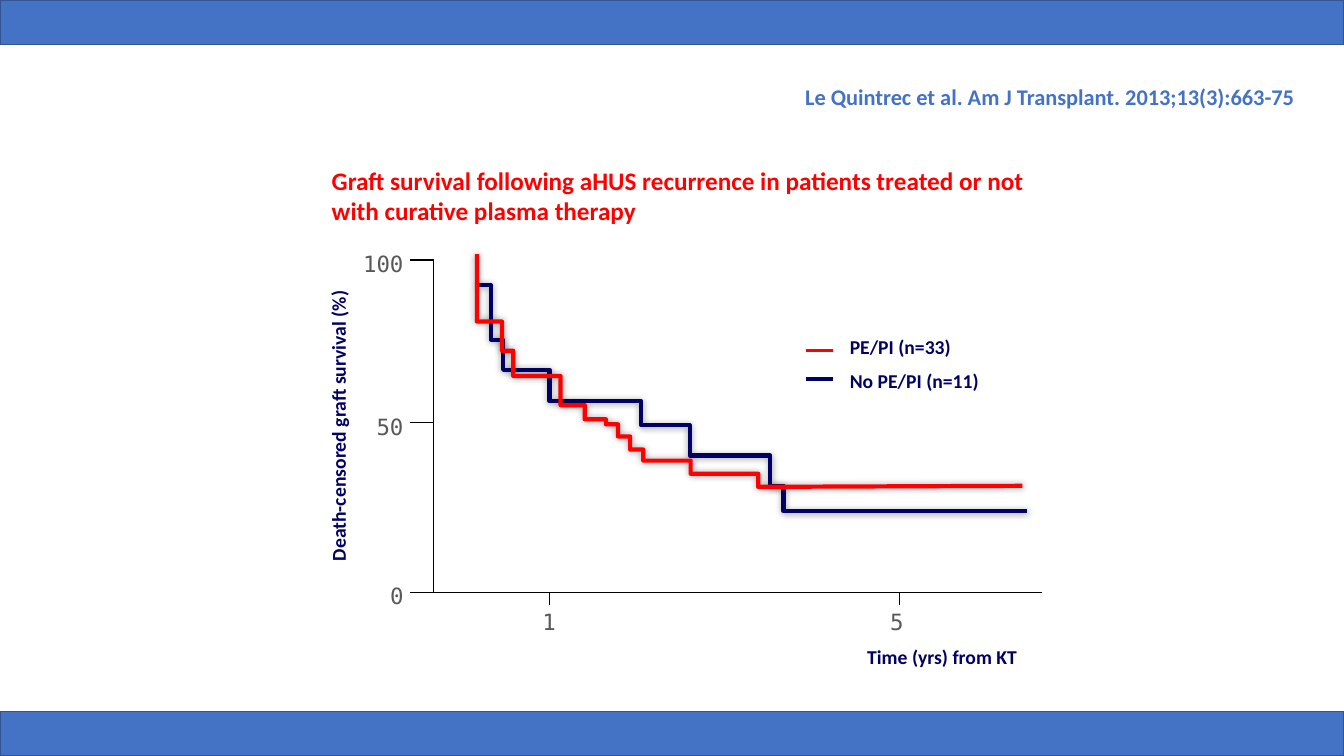
from dataclasses import dataclass

from lxml.etree import SubElement
from pptx import Presentation
from pptx.dml.color import RGBColor
from pptx.enum.shapes import MSO_CONNECTOR as Connector
from pptx.enum.shapes import MSO_SHAPE as Preset
from pptx.enum.text import MSO_ANCHOR as Anchor
from pptx.enum.text import MSO_AUTO_SIZE as AutoSize
from pptx.enum.text import PP_ALIGN as Align
from pptx.oxml.ns import qn
from pptx.util import Inches, Pt

Point = tuple[float, float]
Box = tuple[float, float, float, float]


@dataclass(frozen=True)
class Theme:
    band: str = "4472C4"
    band_edge: str = "325491"
    navy: str = "000066"
    red: str = "FF0000"
    grey: str = "595959"
    black: str = "000000"
    body_font: str = "Calibri"
    tick_font: str = "DejaVu Sans Mono"
    title_size: float = 18
    tick_size: float = 16
    label_size: float = 14
    thin: float = 1
    legend_width: float = 2.25
    curve_width: float = 3


@dataclass(frozen=True)
class Group:
    name: str
    color: str
    start: Point
    drops: list[Point]
    end: Point
    key_y: float
    name_box: Box


@dataclass(frozen=True)
class Tick:
    text: str
    mark: float
    label: float


THEME = Theme()
SLIDE_WIDTH, SLIDE_HEIGHT, BAND_HEIGHT = 13.33, 7.5, 0.44
AXIS_X, AXIS_Y, AXIS_TOP, AXIS_RIGHT = 4.3, 5.88, 2.58, 10.33

GROUPS = [
    Group("No PE/PI (n=11)", THEME.navy, (4.74, 2.83),
          [(4.87, 3.37), (4.99, 3.67), (5.45, 3.98), (6.36, 4.22),
           (6.84, 4.52), (7.64, 4.82), (7.77, 5.07)],
          (10.19, 5.07), 3.76, (8.33, 3.61, 1.81, 0.36)),
    Group("PE/PI (n=33)", THEME.red, (4.73, 2.52),
          [(4.73, 3.19), (4.98, 3.48), (5.09, 3.73), (5.56, 4.02),
           (5.8, 4.16), (6.01, 4.21), (6.13, 4.33), (6.25, 4.46),
           (6.38, 4.57), (6.85, 4.7), (7.52, 4.83)],
          (10.14, 4.82), 3.48, (8.33, 3.27, 1.72, 0.36)),
]
YEARS = [Tick("1", 5.45, 5.27), Tick("5", 8.92, 8.72)]
PERCENTS = [Tick("100", AXIS_TOP, 2.43), Tick("50", 4.19, 4.05),
            Tick("0", AXIS_Y, 5.73)]

deck = Presentation()
deck.slide_width, deck.slide_height = Inches(SLIDE_WIDTH), Inches(SLIDE_HEIGHT)
slide = deck.slides.add_slide(deck.slide_layouts[5])


def rgb(color: str) -> RGBColor:
    return RGBColor.from_string(color)


def write(text: str, box: Box, *, size: float = THEME.label_size,
          color: str = THEME.navy, font: str = THEME.body_font,
          bold: bool = True, align: Align = Align.LEFT, wrap: bool = True,
          spacing: float = 1.0, rotation: float = 0,
          insets: Point = (0.1, 0.05), holder=None) -> None:
    left, top, width, height = map(Inches, box)
    if holder is None:
        holder = slide.shapes.add_textbox(left, top, width, height)
    holder.left, holder.top, holder.width, holder.height = left, top, width, height
    holder.rotation = rotation
    frame = holder.text_frame
    frame.text = text
    frame.word_wrap = wrap
    frame.auto_size = AutoSize.NONE
    frame.vertical_anchor = Anchor.TOP
    frame.margin_left = frame.margin_right = Inches(insets[0])
    frame.margin_top = frame.margin_bottom = Inches(insets[1])
    paragraph = frame.paragraphs[0]
    paragraph.alignment = align
    paragraph.line_spacing = spacing
    style = paragraph.runs[0].font
    style.name, style.size, style.bold = font, Pt(size), bold
    style.color.rgb = rgb(color)


def draw_band(top: float) -> None:
    band = slide.shapes.add_shape(Preset.RECTANGLE, 0, Inches(top),
                                  Inches(SLIDE_WIDTH), Inches(BAND_HEIGHT))
    band.shadow.inherit = False
    band.fill.solid()
    band.fill.fore_color.rgb = rgb(THEME.band)
    band.line.color.rgb = rgb(THEME.band_edge)
    band.line.width = Pt(THEME.thin)


def draw_line(start: Point, end: Point, color: str = THEME.black,
              width: float = THEME.thin) -> None:
    line = slide.shapes.add_connector(Connector.STRAIGHT,
                                      *map(Inches, start + end))
    line.line.color.rgb = rgb(color)
    line.line.width = Pt(width)
    SubElement(line._element.spPr, qn("a:effectLst"))


def step_points(group: Group) -> list[Point]:
    points = [group.start]
    for x, y in group.drops:
        if x != points[-1][0]:
            points.append((x, points[-1][1]))
        points.append((x, y))
    return points + [group.end]


def draw_curve(group: Group) -> None:
    first, *rest = [(Inches(x), Inches(y)) for x, y in step_points(group)]
    builder = slide.shapes.build_freeform(*first)
    builder.add_line_segments(rest, close=False)
    curve = builder.convert_to_shape()
    curve.fill.background()
    curve.line.color.rgb = rgb(group.color)
    curve.line.width = Pt(THEME.curve_width)
    effects = SubElement(curve._element.spPr, qn("a:effectLst"))
    shadow = SubElement(effects, qn("a:outerShdw"), blurRad=str(Pt(5)),
                        dist="0", dir="0", rotWithShape="0")
    shade = SubElement(shadow, qn("a:srgbClr"), val=THEME.black)
    SubElement(shade, qn("a:alpha"), val="40000")


def draw_tick_label(text: str, box: Box, align: Align) -> None:
    write(text, box, size=THEME.tick_size, color=THEME.grey,
          font=THEME.tick_font, bold=False, align=align, wrap=False)


def draw_axes() -> None:
    draw_line((AXIS_X, AXIS_TOP), (AXIS_X, AXIS_Y))
    draw_line((AXIS_RIGHT, AXIS_Y), (AXIS_X, AXIS_Y))
    for year in YEARS:
        draw_line((year.mark, AXIS_Y), (year.mark, AXIS_Y + 0.12))
        draw_tick_label(year.text, (year.label, 5.98, 0.35, 0.39), Align.CENTER)
    for percent in PERCENTS:
        draw_line((AXIS_X - 0.23, percent.mark), (AXIS_X, percent.mark))
        width = 0.22 + 0.13 * len(percent.text)
        draw_tick_label(percent.text, (4.1 - width, percent.label, width, 0.39),
                        Align.RIGHT)
    write("Time (yrs) from KT", (8.33, 6.35, 2.03, 0.35), align=Align.CENTER)
    write("Death-censored graft survival (%)", (1.37, 4, 3.85, 0.45),
          align=Align.CENTER, spacing=1.5, rotation=270)


def main() -> None:
    for top in (0, SLIDE_HEIGHT - BAND_HEIGHT):
        draw_band(top)
    for group in GROUPS:
        draw_curve(group)
        draw_line((7.99, group.key_y), (8.26, group.key_y), group.color,
                  THEME.legend_width)
        write(group.name, group.name_box)
    draw_axes()
    write("Graft survival following aHUS recurrence in patients treated or not "
          "with curative plasma therapy", (3.19, 1.59, 7.17, 0.71),
          size=THEME.title_size, color=THEME.red, holder=slide.shapes.title)
    write("Le Quintrec et al. Am J Transplant. 2013;13(3):663-75",
          (6.78, 0.75, 6.19, 0.37), size=THEME.tick_size, color=THEME.band,
          align=Align.RIGHT, insets=(0.13, 0.07))
    deck.save("out.pptx")


if __name__ == "__main__":
    main()
